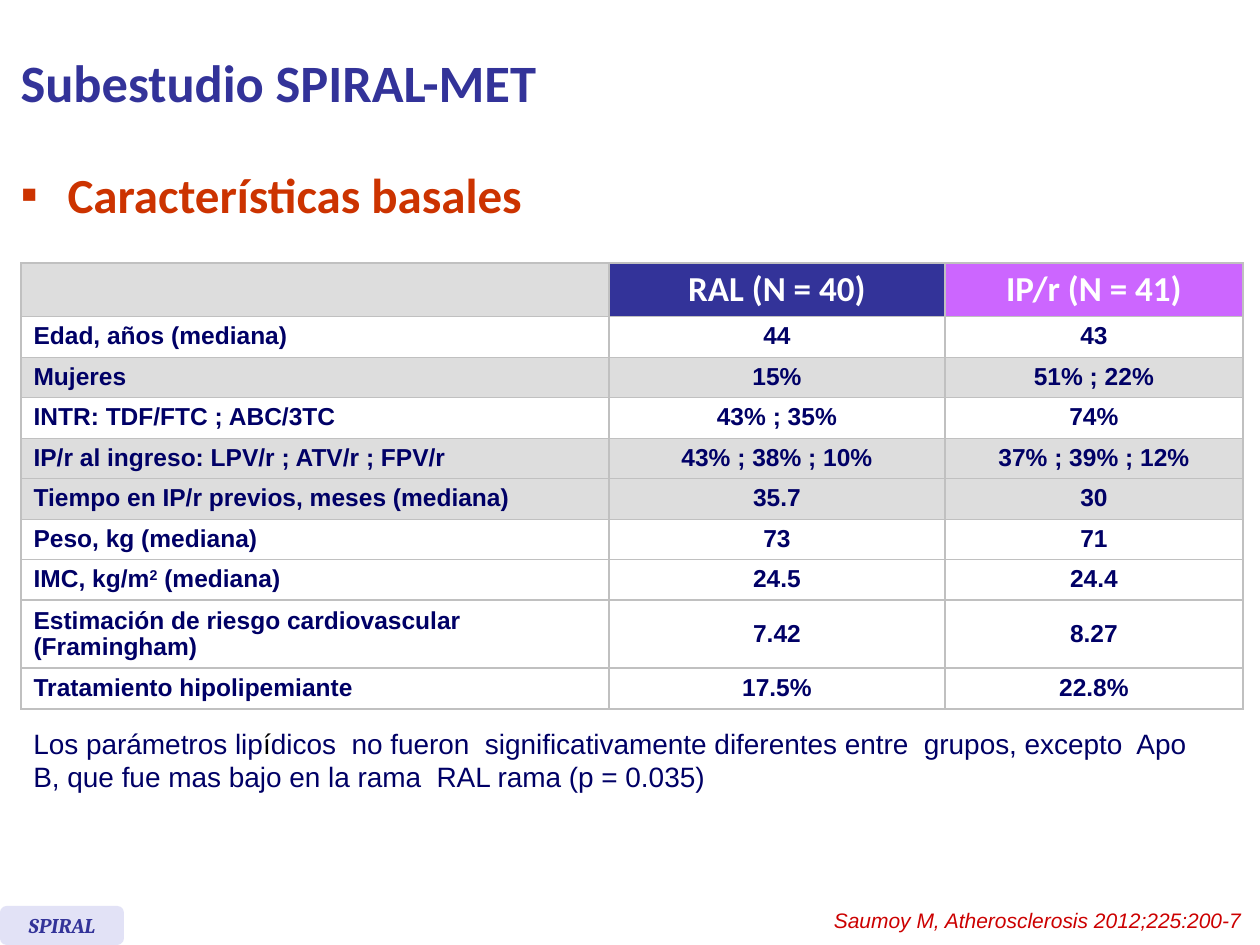
from lxml.etree import SubElement
from pptx import Presentation
from pptx.dml.color import RGBColor
from pptx.enum.shapes import MSO_SHAPE as Shape
from pptx.enum.text import MSO_ANCHOR as Anchor, PP_ALIGN as Align
from pptx.oxml.ns import qn
from pptx.util import Emu, Pt

COLORS = {
    "navy": "333399", "ink": "000066", "orange": "CC3300", "violet": "CC66FF",
    "grey": "DDDDDD", "white": "FFFFFF", "border": "C0C0C0", "red": "CC0000",
    "black": "000000", "badge": "E2E2F6",
}
TITLE = "Subestudio SPIRAL-MET"
HEADING = "Características basales"
HEADERS = [("", "grey"), ("RAL (N = 40)", "navy"), ("IP/r (N = 41)", "violet")]
ROWS = [
    ("Edad, años (mediana)", "44", "43", "white"),
    ("Mujeres", "15%", "51% ; 22%", "grey"),
    ("INTR: TDF/FTC ; ABC/3TC", "43% ; 35%", "74%", "white"),
    ("IP/r al ingreso: LPV/r ; ATV/r ; FPV/r", "43% ; 38% ; 10%", "37% ; 39% ; 12%", "grey"),
    ("Tiempo en IP/r previos, meses (mediana)", "35.7", "30", "grey"),
    ("Peso, kg (mediana)", "73", "71", "white"),
    ("IMC, kg/m^2^ (mediana)", "24.5", "24.4", "white"),
    ("Estimación de riesgo cardiovascular (Framingham)", "7.42", "8.27", "white"),
    ("Tratamiento hipolipemiante", "17.5%", "22.8%", "white"),
]
NOTE = [
    ("Los parámetros lip", "ink"),
    ("í", "black"),
    ("dicos  no fueron  significativamente diferentes entre  grupos, excepto  Apo B, "
     "que fue mas bajo en la rama  RAL rama (p = 0.035)", "ink"),
]
CITATION = "Saumoy M, Atherosclerosis 2012;225:200-7"
BADGE = "SPIRAL"

COLUMN_WIDTHS = [588, 336, 298]
HEADER_HEIGHT, TWO_LINE_HEIGHT, TWO_LINE_ROW = 53, 68, 8


def px(n):
    return Emu(round(n * 914400 / 126))


def box(*lengths):
    return [px(n) for n in lengths]


def rgb(name):
    return RGBColor.from_string(COLORS[name])


def place(shape, *lengths):
    shape.left, shape.top, shape.width, shape.height = box(*lengths)


def paint(target, color):
    target.fill.solid()
    target.fill.fore_color.rgb = rgb(color)


def write(paragraph, text, size, font, color, bold=False, italic=False):
    run = paragraph.add_run()
    run.text = text
    run.font.size, run.font.name = Pt(size), font
    run.font.bold, run.font.italic = bold, italic
    run.font.color.rgb = rgb(color)
    return run


def add_square_bullet(paragraph, color):
    props = paragraph._p.get_or_add_pPr()
    props.set("marL", str(px(47)))
    props.set("indent", str(-px(47)))
    SubElement(SubElement(props, qn("a:buClr")), qn("a:srgbClr"), val=COLORS[color])
    SubElement(props, qn("a:buFont"), typeface="Arial")
    SubElement(props, qn("a:buChar"), char="▪")


def format_cell(cell, fill):
    props = cell._tc.get_or_add_tcPr()
    for side in ("lnL", "lnR", "lnT", "lnB"):
        line = SubElement(props, qn(f"a:{side}"), w=str(Pt(1)))
        SubElement(SubElement(line, qn("a:solidFill")), qn("a:srgbClr"), val=COLORS["border"])
    paint(cell, fill)
    cell.vertical_anchor = Anchor.MIDDLE


def fill_cell(cell, text, fill, centered, style):
    format_cell(cell, fill)
    paragraph = cell.text_frame.paragraphs[0]
    paragraph.line_spacing = 0.95
    paragraph.alignment = Align.CENTER if centered else Align.LEFT
    for i, part in enumerate(text.split("^")):
        if part:
            run = write(paragraph, part, *style, bold=True)
            if i % 2:
                run._r.get_or_add_rPr().set("baseline", "30000")


def add_text(slide, *lengths):
    frame = slide.shapes.add_textbox(*box(*lengths)).text_frame
    frame.word_wrap = True
    return frame.paragraphs[0]


def add_baseline_table(slide):
    table = slide.shapes.add_table(
        len(ROWS) + 1, len(HEADERS), *box(21, 263, sum(COLUMN_WIDTHS), 446)).table
    table.first_row = table.horz_banding = False
    for column, width in zip(table.columns, COLUMN_WIDTHS):
        column.width = px(width)
    for i, row in enumerate(table.rows):
        row.height = px({0: HEADER_HEIGHT, TWO_LINE_ROW: TWO_LINE_HEIGHT}.get(i, 40 + i % 2))
    for c, (text, fill) in enumerate(HEADERS):
        fill_cell(table.cell(0, c), text, fill, True, (20, "Calibri", "white"))
    for r, (*texts, fill) in enumerate(ROWS, 1):
        for c, text in enumerate(texts):
            fill_cell(table.cell(r, c), text, fill, c > 0, (14, "Arial", "ink"))


def main():
    prs = Presentation()
    prs.slide_width, prs.slide_height = box(1260, 945)
    slide = prs.slides.add_slide(prs.slide_layouts[1])

    title, heading = slide.placeholders
    place(title, 8, 6, 1221, 152)
    title.text_frame.vertical_anchor = Anchor.MIDDLE
    title_line = title.text_frame.paragraphs[0]
    title_line.alignment = Align.LEFT
    write(title_line, TITLE, 30, "Calibri", "navy", bold=True)

    place(heading, 8, 158, 1218, 73)
    heading_line = heading.text_frame.paragraphs[0]
    heading_line.space_before = Pt(0)
    add_square_bullet(heading_line, "orange")
    write(heading_line, HEADING, 28, "Calibri", "orange", bold=True)

    add_baseline_table(slide)

    note = add_text(slide, 21, 720, 1205, 81)
    for text, color in NOTE:
        write(note, text, 16, "Arial", color)

    citation = add_text(slide, 813, 901, 441, 38)
    citation.alignment = Align.RIGHT
    write(citation, CITATION, 12, "Arial", "red", italic=True)

    badge = slide.shapes.add_shape(Shape.ROUNDED_RECTANGLE, *box(0, 906, 124, 39))
    badge.shadow.inherit = False
    paint(badge, "badge")
    badge.line.fill.background()
    badge.text_frame.word_wrap = False
    badge.text_frame.vertical_anchor = Anchor.MIDDLE
    badge_line = badge.text_frame.paragraphs[0]
    badge_line.alignment = Align.CENTER
    write(badge_line, BADGE, 12, "Cambria", "navy", bold=True, italic=True)

    prs.save("out.pptx")


if __name__ == "__main__":
    main()
